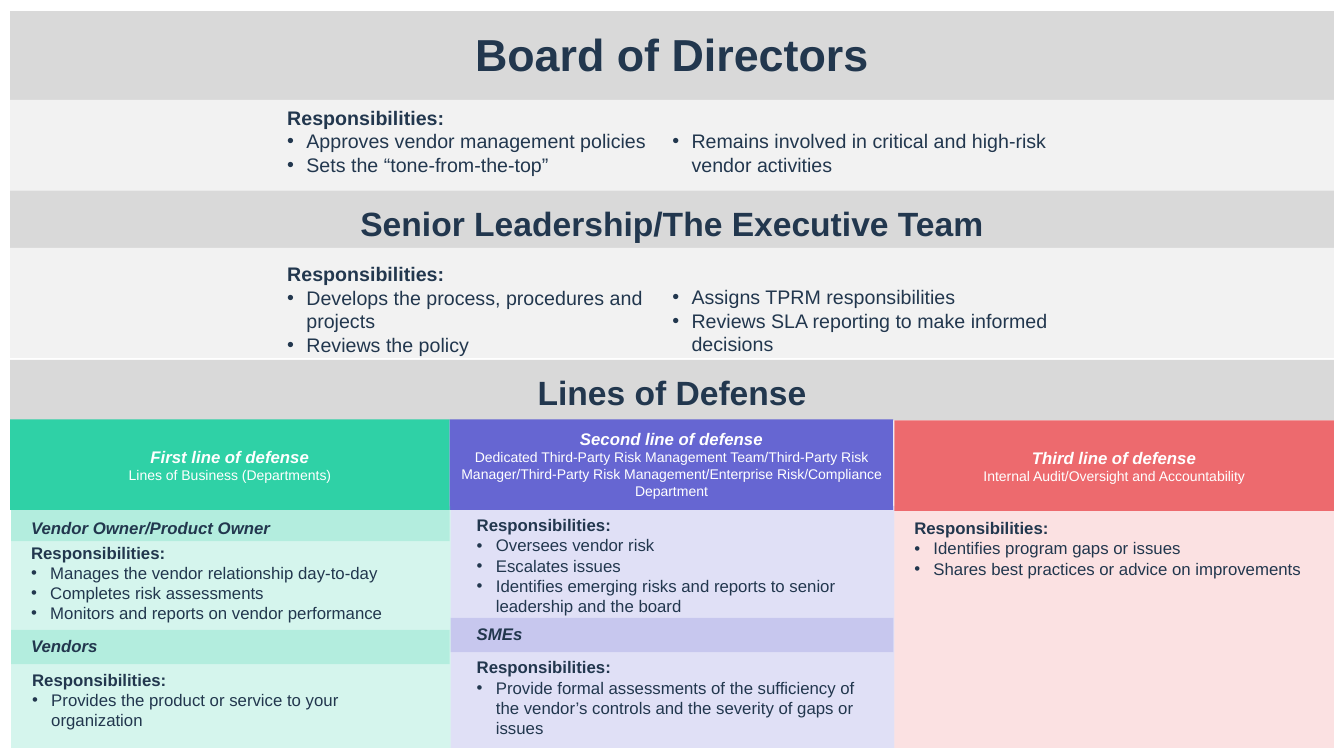
from lxml.etree import SubElement
from pptx import Presentation
from pptx.dml.color import RGBColor
from pptx.enum.shapes import MSO_SHAPE
from pptx.enum.text import MSO_AUTO_SIZE, PP_ALIGN
from pptx.oxml.ns import qn
from pptx.util import Pt

EMU_PER_PX = 9144
COLORS = {
    "ink": "22374E",
    "white": "FFFFFF",
    "band": "D9D9D9",
    "panel": "F2F2F2",
    "first": "2FD1A6",
    "second": "6666D2",
    "third": "ED6A6E",
}


def px(length):
    return length * EMU_PER_PX


class Board:
    font = "Arial"
    indent = 19
    tint = 20000

    def __init__(self, slide):
        self.slide = slide

    def block(self, left, top, width, height, color, tinted=False):
        block = self.slide.shapes.add_shape(
            MSO_SHAPE.RECTANGLE, px(left), px(top), px(width), px(height))
        block.shadow.inherit = False
        block.line.fill.background()
        block.fill.solid()
        block.fill.fore_color.rgb = RGBColor.from_string(COLORS[color])
        if tinted:
            shade = block._element.spPr.find(qn("a:solidFill"))[0]
            SubElement(shade, qn("a:alpha"), val=str(self.tint))

    def frame(self, left, top, width, height):
        frame = self.slide.shapes.add_textbox(
            px(left), px(top), px(width), px(height)).text_frame
        frame.word_wrap = True
        frame.auto_size = MSO_AUTO_SIZE.SHAPE_TO_FIT_TEXT
        return frame

    def add_text(self, frame, text, size=12, color="ink", bold=False,
                 italic=False, align=PP_ALIGN.LEFT, bullet=False):
        paragraph = frame.paragraphs[0]
        if paragraph.runs:
            paragraph = frame.add_paragraph()
        paragraph.alignment = align
        if bullet:
            properties = paragraph._p.get_or_add_pPr()
            properties.set("marL", str(px(self.indent)))
            properties.set("indent", str(-px(self.indent)))
            SubElement(properties, qn("a:buFont"), typeface=self.font)
            SubElement(properties, qn("a:buChar"), char="•")
        run = paragraph.add_run()
        run.text = text
        run.font.name = self.font
        run.font.size = Pt(size)
        run.font.bold = bold
        run.font.italic = italic
        run.font.color.rgb = RGBColor.from_string(COLORS[color])

    def title(self, top, height, text, size):
        frame = self.frame(10, top, 1313, height)
        self.add_text(frame, text, size=size, bold=True, align=PP_ALIGN.CENTER)

    def duties(self, left, top, width, height, items, size=12, headed=True):
        frame = self.frame(left, top, width, height)
        if headed:
            self.add_text(frame, "Responsibilities:", size=size, bold=True)
        for item in items:
            self.add_text(frame, item, size=size, bullet=True)

    def split_duties(self, top, height, left_items, right_items):
        self.duties(275, top, 401, height, left_items, size=14)
        self.duties(657, top + 23, 401, height - 23, right_items, size=14, headed=False)

    def defense_header(self, left, top, width, color, text_top, name, owners):
        self.block(left, top, width, 90, color)
        frame = self.frame(left, text_top, width, 47)
        self.add_text(frame, name, color="white", bold=True, italic=True,
                      align=PP_ALIGN.CENTER)
        self.add_text(frame, owners, size=10, color="white", align=PP_ALIGN.CENTER)

    def role(self, left, top, width, color, text_left, text_top, name):
        self.block(left, top, width, 34, color, tinted=True)
        frame = self.frame(text_left, text_top, 384, 30)
        self.add_text(frame, name, bold=True, italic=True)


def main():
    presentation = Presentation()
    presentation.slide_width = px(1333)
    presentation.slide_height = px(750)
    board = Board(presentation.slides.add_slide(presentation.slide_layouts[6]))

    for top, height, color in [(11, 89, "band"), (189, 60, "band"), (99, 90, "panel"),
                               (246, 109, "panel"), (357, 60, "band")]:
        board.block(10, top, 1313, height, color)

    board.title(22, 64, "Board of Directors", 32)
    board.title(196, 50, "Senior Leadership/The Executive Team", 24)
    board.title(364, 50, "Lines of Defense", 24)

    board.split_duties(
        100, 81,
        ["Approves vendor management policies", "Sets the “tone-from-the-top”"],
        ["Remains involved in critical and high-risk vendor activities"])
    board.split_duties(
        255, 104,
        ["Develops the process, procedures and projects", "Reviews the policy"],
        ["Assigns TPRM responsibilities",
         "Reviews SLA reporting to make informed decisions"])

    board.defense_header(10, 416, 436, "first", 438, "First line of defense",
                         "Lines of Business (Departments)")
    board.defense_header(
        446, 416, 440, "second", 420, "Second line of defense",
        "Dedicated Third-Party Risk Management Team/Third-Party Risk "
        "Manager/Third-Party Risk Management/Enterprise Risk/Compliance Department")
    board.defense_header(887, 417, 436, "third", 439, "Third line of defense",
                         "Internal Audit/Oversight and Accountability")

    for left, width, color in [(11, 436, "first"), (447, 440, "second"),
                               (887, 436, "third")]:
        board.block(left, 502, width, 240, color, tinted=True)

    board.role(11, 503, 435, "first", 21, 509, "Vendor Owner/Product Owner")
    board.role(11, 625, 435, "first", 21, 626, "Vendors")
    board.role(447, 613, 439, "second", 463, 614, "SMEs")

    for left, top, height, items in [
        (21, 533, 91, ["Manages the vendor relationship day-to-day",
                       "Completes risk assessments",
                       "Monitors and reports on vendor performance"]),
        (22, 659, 71, ["Provides the product or service to your organization"]),
        (463, 506, 111, ["Oversees vendor risk", "Escalates issues",
                         "Identifies emerging risks and reports to senior "
                         "leadership and the board"]),
        (463, 647, 91, ["Provide formal assessments of the sufficiency of the "
                        "vendor’s controls and the severity of gaps or issues"]),
        (897, 509, 71, ["Identifies program gaps or issues",
                        "Shares best practices or advice on improvements"]),
    ]:
        board.duties(left, top, 414, height, items)

    presentation.save("out.pptx")


if __name__ == "__main__":
    main()
